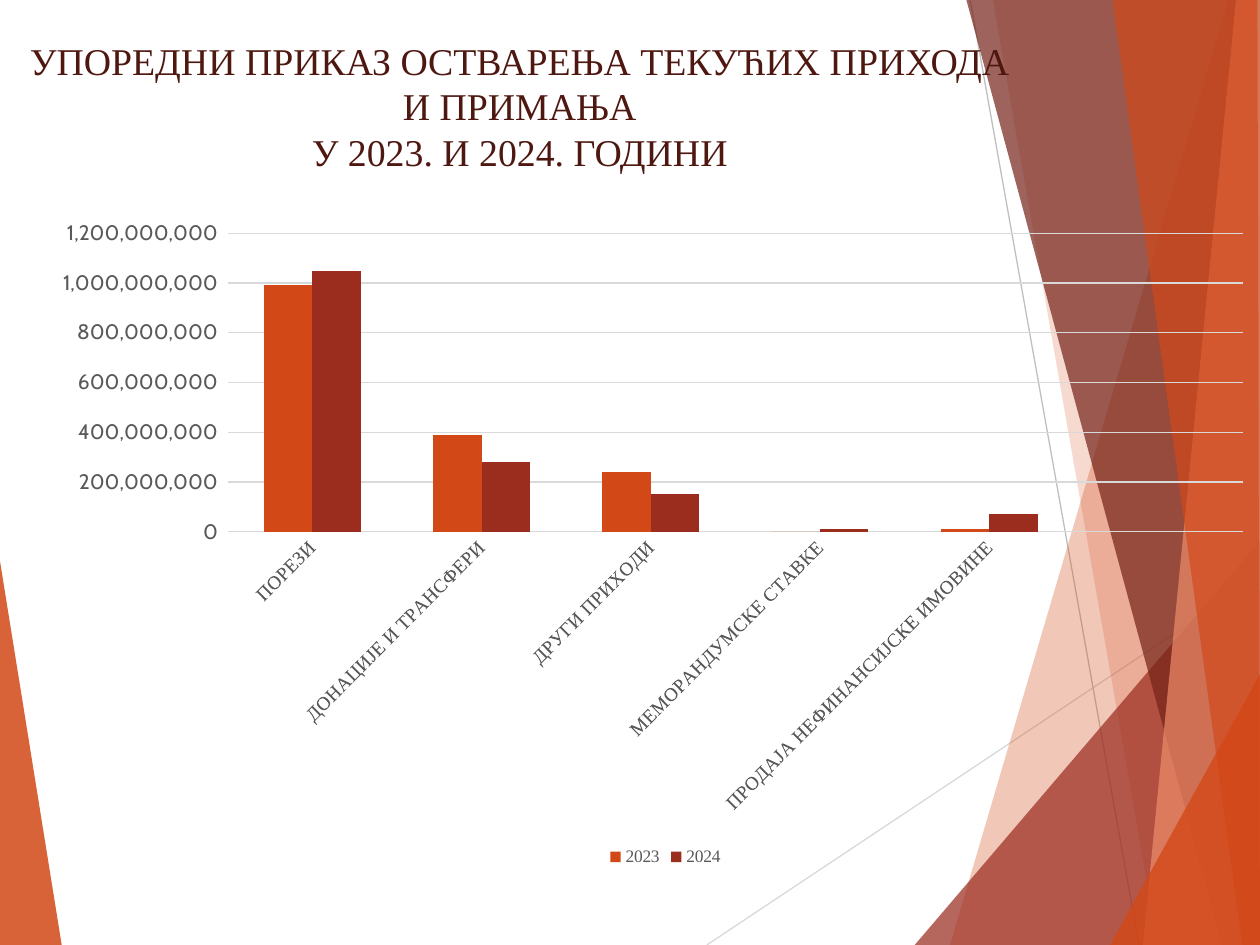
from dataclasses import dataclass

from lxml.etree import SubElement
from pptx import Presentation
from pptx.chart.data import CategoryChartData
from pptx.dml.color import RGBColor
from pptx.enum.chart import XL_CHART_TYPE, XL_LEGEND_POSITION, XL_TICK_MARK
from pptx.enum.shapes import MSO_CONNECTOR
from pptx.enum.text import MSO_ANCHOR, PP_ALIGN
from pptx.oxml.ns import qn
from pptx.util import Inches, Pt


@dataclass(frozen=True)
class Theme:
    orange: str = "D34817"
    red: str = "9B2D1F"
    maroon: str = "742217"
    salmon: str = "EF8C6A"
    heading: str = "4E1710"
    label: str = "595959"
    grid: str = "D9D9D9"
    ray: str = "BFBFBF"
    serif: str = "Times New Roman"
    sans: str = "Cabin"
    title_size: float = 21.6
    value_size: float = 12
    category_size: float = 11
    legend_size: float = 10
    hairline: float = 0.75


theme = Theme()


def write_text(frame, text, *, size, color, font, align):
    frame.text = text
    for paragraph in frame.paragraphs:
        paragraph.alignment = align
        for run in paragraph.runs:
            run.font.size = Pt(size)
            run.font.name = font
            run.font.color.rgb = RGBColor.from_string(color)


prs = Presentation()
prs.slide_width, prs.slide_height = Inches(10), Inches(7.5)
slide = prs.slides.add_slide(prs.slide_layouts[5])

# Grid of 100 columns by 75 rows
column = prs.slide_width // 100
row = prs.slide_height // 75
right, bottom = 100, 75

# Facets and rays, from back to front: colour, opacity in percent, corners
left_wedge = (theme.orange, 85, [(-0.1, 43.9), (4.9, bottom), (-0.1, bottom)])
rays = [
    (theme.grid, (56.1, bottom), (100.1, 45.7)),
    (theme.ray, (77, 0), (90.4, bottom)),
]
right_facets = [
    (theme.orange, 30, [(97.5, 0), (75.4, bottom), (right, bottom), (right, 0)]),
    (theme.orange, 20, [(78.8, 0), (91.9, bottom), (right, bottom), (right, 0)]),
    (theme.red, 72, [(72.6, bottom), (right, 42.9), (right, bottom)]),
    (theme.maroon, 70, [(76.7, 0), (97, bottom), (right, bottom), (right, 0)]),
    (theme.salmon, 70, [(98.1, 0), (90.7, bottom), (right, bottom), (right, 0)]),
    (theme.orange, 65, [(88.3, 0), (98.6, bottom), (right, bottom), (99.8, 0)]),
    (theme.orange, 80, [(88.1, bottom), (right, 53.5), (right, bottom)]),
]

for color, start, end in rays:
    ray = slide.shapes.add_connector(
        MSO_CONNECTOR.STRAIGHT,
        int(start[0] * column), int(start[1] * row),
        int(end[0] * column), int(end[1] * row),
    )
    ray.line.color.rgb = RGBColor.from_string(color)
    ray.line.width = Pt(theme.hairline)
    SubElement(ray.element.spPr, qn("a:effectLst"))

for color, opacity, corners in [left_wedge, *right_facets]:
    first, *others = [(int(x * column), int(y * row)) for x, y in corners]
    builder = slide.shapes.build_freeform(*first)
    builder.add_line_segments(others, close=True)
    facet = builder.convert_to_shape()
    facet.shadow.inherit = False
    facet.line.fill.background()
    facet.fill.solid()
    facet.fill.fore_color.rgb = RGBColor.from_string(color)
    solid_color = facet.element.spPr.find(qn("a:solidFill"))[0]
    SubElement(solid_color, qn("a:alpha"), val=str(opacity * 1000))

# Title, brought in front of the facets
title = slide.shapes.title
title.element.getparent().append(title.element)
title.left, title.top = 0, int(2.5 * row)
title.width, title.height = int(82.5 * column), int(10.8 * row)
title.text_frame.word_wrap = True
title.text_frame.vertical_anchor = MSO_ANCHOR.TOP
title.text_frame.margin_left = title.text_frame.margin_right = Inches(0.12)
write_text(
    title.text_frame,
    "УПОРЕДНИ ПРИКАЗ ОСТВАРЕЊА ТЕКУЋИХ ПРИХОДА И ПРИМАЊА\vУ 2023. И 2024. ГОДИНИ",
    size=theme.title_size, color=theme.heading, font=theme.serif,
    align=PP_ALIGN.CENTER,
)

# Revenue by source; the last slot on the axis is empty
million = 1_000_000
revenue = CategoryChartData(number_format="#,##0")
revenue.categories = [
    "ПОРЕЗИ", "ДОНАЦИЈЕ И ТРАНСФЕРИ", "ДРУГИ ПРИХОДИ",
    "МЕМОРАНДУМСКЕ СТАВКЕ", "ПРОДАЈА НЕФИНАНСИЈСКЕ ИМОВИНЕ", "",
]
years = [
    ("2023", theme.orange, [990, 390, 240, 0, 10]),
    ("2024", theme.red, [1050, 280, 150, 10, 70]),
]
for year, _, amounts in years:
    revenue.add_series(year, [amount * million for amount in amounts] + [None])

chart = slide.shapes.add_chart(
    XL_CHART_TYPE.COLUMN_CLUSTERED,
    5 * column, 17 * row, 95 * column, int(52.2 * row), revenue,
).chart
chart.has_title = False
chart.font.name = theme.sans
chart.font.size = Pt(theme.legend_size)
chart.has_legend = True
chart.legend.position = XL_LEGEND_POSITION.BOTTOM
chart.legend.include_in_layout = False

plot = chart.plots[0]
plot.gap_width, plot.overlap = 150, 0
plot.vary_by_categories = False
for series, (_, color, _) in zip(plot.series, years):
    series.invert_if_negative = False
    series.format.fill.solid()
    series.format.fill.fore_color.rgb = RGBColor.from_string(color)

sources, amounts_axis = chart.category_axis, chart.value_axis
for axis in (sources, amounts_axis):
    axis.major_tick_mark = axis.minor_tick_mark = XL_TICK_MARK.NONE
    axis.format.line.fill.background()
amounts_axis.minimum_scale = 0
amounts_axis.maximum_scale = 1200 * million
amounts_axis.major_unit = 200 * million
amounts_axis.tick_labels.number_format = "#,##0_ ;\\-#,##0\\ "
amounts_axis.tick_labels.number_format_is_linked = False
gridline = amounts_axis.major_gridlines.format.line
gridline.color.rgb = RGBColor.from_string(theme.grid)
gridline.width = Pt(theme.hairline)

for font, face, size in [
    (sources.tick_labels.font, theme.serif, theme.category_size),
    (amounts_axis.tick_labels.font, theme.sans, theme.value_size),
    (chart.legend.font, theme.serif, theme.legend_size),
]:
    font.name, font.size = face, Pt(size)
    font.color.rgb = RGBColor.from_string(theme.label)

# Category labels slant upwards by 45 degrees
slant = chart.element.find(f".//{qn('c:catAx')}/{qn('c:txPr')}/{qn('a:bodyPr')}")
slant.set("rot", str(-45 * 60000))
slant.set("vert", "horz")

# Fixed inner plot area, in percent of the chart
plot_area = chart.element.find(f".//{qn('c:plotArea')}")
layout = plot_area.find(qn("c:layout"))
if layout is None:
    layout = SubElement(plot_area, qn("c:layout"))
    plot_area.insert(0, layout)
manual = SubElement(layout, qn("c:manualLayout"))
for tag, mode in [("layoutTarget", "inner"), ("xMode", "edge"), ("yMode", "edge")]:
    SubElement(manual, qn(f"c:{tag}"), val=mode)
for tag, percent in [("x", 13.2), ("y", 2.9), ("w", 85.4), ("h", 45.4)]:
    SubElement(manual, qn(f"c:{tag}"), val=str(percent / 100))

prs.save("out.pptx")
